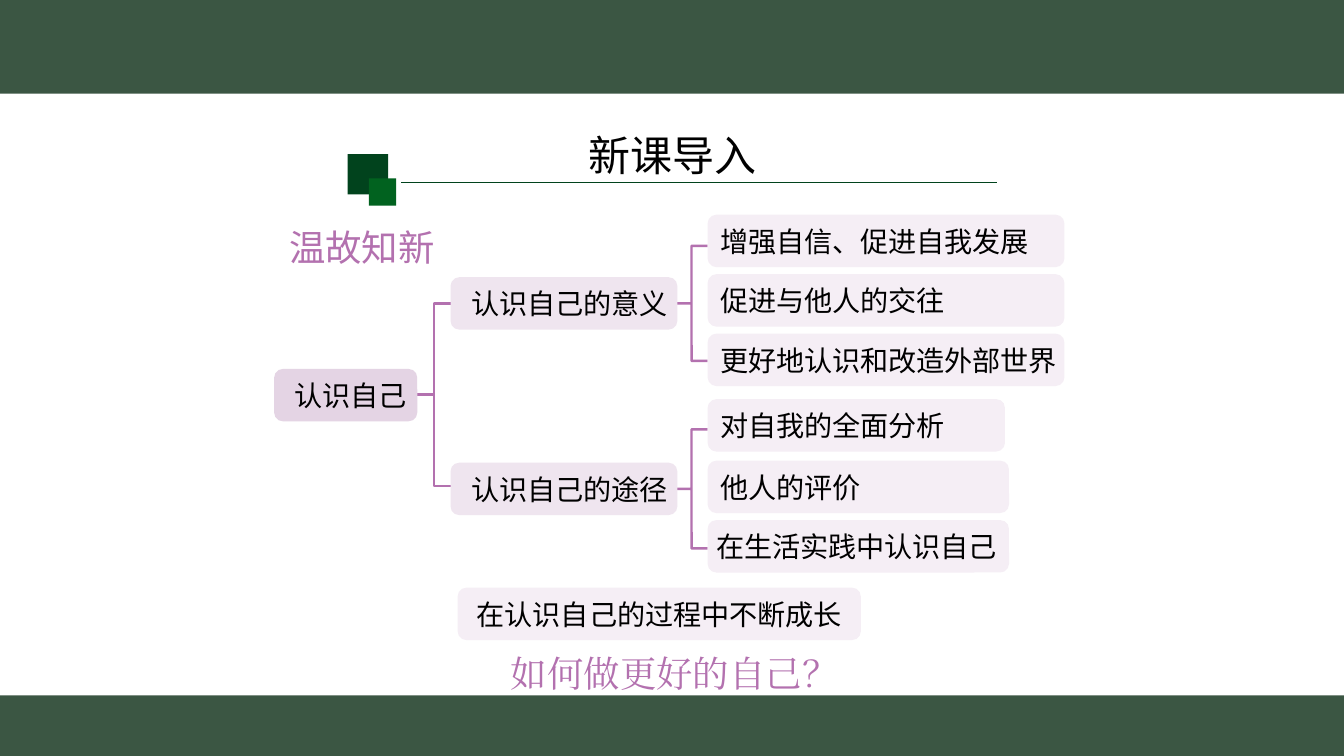
from dataclasses import dataclass

from lxml.etree import SubElement
from pptx import Presentation
from pptx.dml.color import RGBColor
from pptx.enum.shapes import MSO_CONNECTOR as Connector, MSO_SHAPE as Shape
from pptx.enum.text import MSO_ANCHOR as Anchor, PP_ALIGN as Align
from pptx.oxml.ns import qn
from pptx.util import Inches, Pt

SLIDE_WIDTH, SLIDE_HEIGHT = Inches(13.33), Inches(7.5)
COLUMN, ROW = SLIDE_WIDTH / 160, SLIDE_HEIGHT / 90
SANS, SERIF = "Noto Sans CJK SC", "Times New Roman"
BLACK, BAND, DARK_GREEN, GREEN = "000000", "3B5643", "01431D", "01621F"
PURPLE, ROOT_FILL, BRANCH_FILL, LEAF_FILL = "B371AF", "E4D4E4", "EFE5EF", "F5EEF5"
NODE_HEIGHT = 6.24
ROOT_LEFT, BRANCH_LEFT, LEAF_LEFT = 0, 21, 51.6
BRANCHES = [
    ("认识自己的意义", 7.44, 3.72, 13.68, [
        ("增强自信、促进自我发展", 0, 42.48, 1.2),
        ("促进与他人的交往", 7.08, 42.48, 1.2),
        ("更好地认识和改造外部世界", 14.16, 42.48, 1.2),
    ]),
    ("认识自己的途径", 29.52, 25.56, 14.16, [
        ("对自我的全面分析", 21.96, 35.4, 1.2),
        ("他人的评价", 29.28, 35.88, 1.2),
        ("在生活实践中认识自己", 36.36, 35.88, 0.72),
    ]),
]


@dataclass
class Box:
    left: float
    top: float
    width: float
    height: float

    def inner(self, left, top, width, height):
        return Box(self.left + left, self.top + top, width, height)

    def emu(self):
        return (round(self.left * COLUMN), round(self.top * ROW),
                round(self.width * COLUMN), round(self.height * ROW))


def color(value):
    return RGBColor.from_string(value)


def add_block(slide, kind, box, fill):
    shape = slide.shapes.add_shape(kind, *box.emu())
    shape.shadow.inherit = False
    shape.fill.solid()
    shape.fill.fore_color.rgb = color(fill)
    shape.line.fill.background()
    return shape


def write(shape, text, size, font_color, font=SANS, align=Align.LEFT, spacing=1.0):
    paragraph = shape.text_frame.paragraphs[0]
    paragraph.alignment = align
    paragraph.line_spacing = spacing
    run = paragraph.add_run()
    run.text = text
    run.font.size = Pt(size)
    run.font.name = font
    run.font.color.rgb = color(font_color)
    SubElement(run.font._element, qn("a:ea"), typeface=font)


def add_bands(slide, box):
    for top, height in ((0, 11.16), (82.8, 7.2)):
        add_block(slide, Shape.RECTANGLE, box.inner(0, top, box.width, height), BAND)


def add_header(slide, box):
    title = slide.shapes.title
    title.left, title.top, title.width, title.height = box.emu()
    title.text_frame.vertical_anchor = Anchor.MIDDLE
    write(title, "新课导入", 30, BLACK, align=Align.CENTER, spacing=0.9)
    left, top, width, _ = box.inner(21.6, 6.72, 70.92, 0).emu()
    rule = slide.shapes.add_connector(Connector.STRAIGHT, left, top, left + width, top)
    rule.line.color.rgb = color(DARK_GREEN)
    rule.line.width = Pt(1)
    SubElement(rule._element.spPr, qn("a:effectLst"))
    for offset, drop, side, fill in ((15.24, 3.36, 4.8, DARK_GREEN),
                                     (17.76, 6.24, 3.24, GREEN)):
        add_block(slide, Shape.RECTANGLE, box.inner(offset, drop, side, side), fill)


def add_caption(slide, box, text, font, align):
    caption = slide.shapes.add_textbox(*box.emu())
    caption.text_frame.word_wrap = True
    write(caption, text, 26, PURPLE, font, align, 1.5)


def add_node(slide, box, text, fill, inset, align=Align.LEFT):
    node = add_block(slide, Shape.ROUNDED_RECTANGLE, box, fill)
    frame = node.text_frame
    frame.word_wrap = True
    frame.vertical_anchor = Anchor.MIDDLE
    frame.margin_left, frame.margin_right = round(inset * COLUMN), 0
    frame.margin_top = frame.margin_bottom = 0
    write(node, text, 20.1, BLACK, align=align)


def add_brace(slide, box):
    brace = slide.shapes.add_shape(Shape.LEFT_BRACE, *box.emu())
    brace.shadow.inherit = False
    brace.adjustments[0] = 0
    brace.fill.background()
    brace.line.color.rgb = color(PURPLE)
    brace.line.width = Pt(1.75)


def add_mind_map(slide, box):
    add_brace(slide, box.inner(17.04, 10.56, 3.96, 21.72))
    add_node(slide, box.inner(ROOT_LEFT, 18.36, 17.04, NODE_HEIGHT),
             "认识自己", ROOT_FILL, 2.1)
    for name, top, brace_top, brace_height, leaves in BRANCHES:
        add_brace(slide, box.inner(LEAF_LEFT - 3.84, brace_top, 3.84, brace_height))
        add_node(slide, box.inner(BRANCH_LEFT, top, 27, NODE_HEIGHT),
                 name, BRANCH_FILL, 2.2)
        for text, leaf_top, width, inset in leaves:
            add_node(slide, box.inner(LEAF_LEFT, leaf_top, width, NODE_HEIGHT),
                     text, LEAF_FILL, inset)
    add_node(slide, box.inner(21.84, 44.4, 48, NODE_HEIGHT),
             "在认识自己的过程中不断成长", LEAF_FILL, 0, Align.CENTER)


def main():
    presentation = Presentation()
    presentation.slide_width, presentation.slide_height = SLIDE_WIDTH, SLIDE_HEIGHT
    slide = presentation.slides.add_slide(presentation.slide_layouts[5])
    add_bands(slide, Box(0, 0, 160, 90))
    add_header(slide, Box(26.16, 15, 107.76, 7.56))
    add_caption(slide, Box(11.76, 74.28, 137.16, 8.4),
                "如何做更好的自己？", SERIF, Align.CENTER)
    add_caption(slide, Box(33.24, 23.64, 24, 8.16), "温故知新", SANS, Align.LEFT)
    add_mind_map(slide, Box(32.64, 25.56, 94.08, 50.64))
    presentation.save("out.pptx")


if __name__ == "__main__":
    main()
